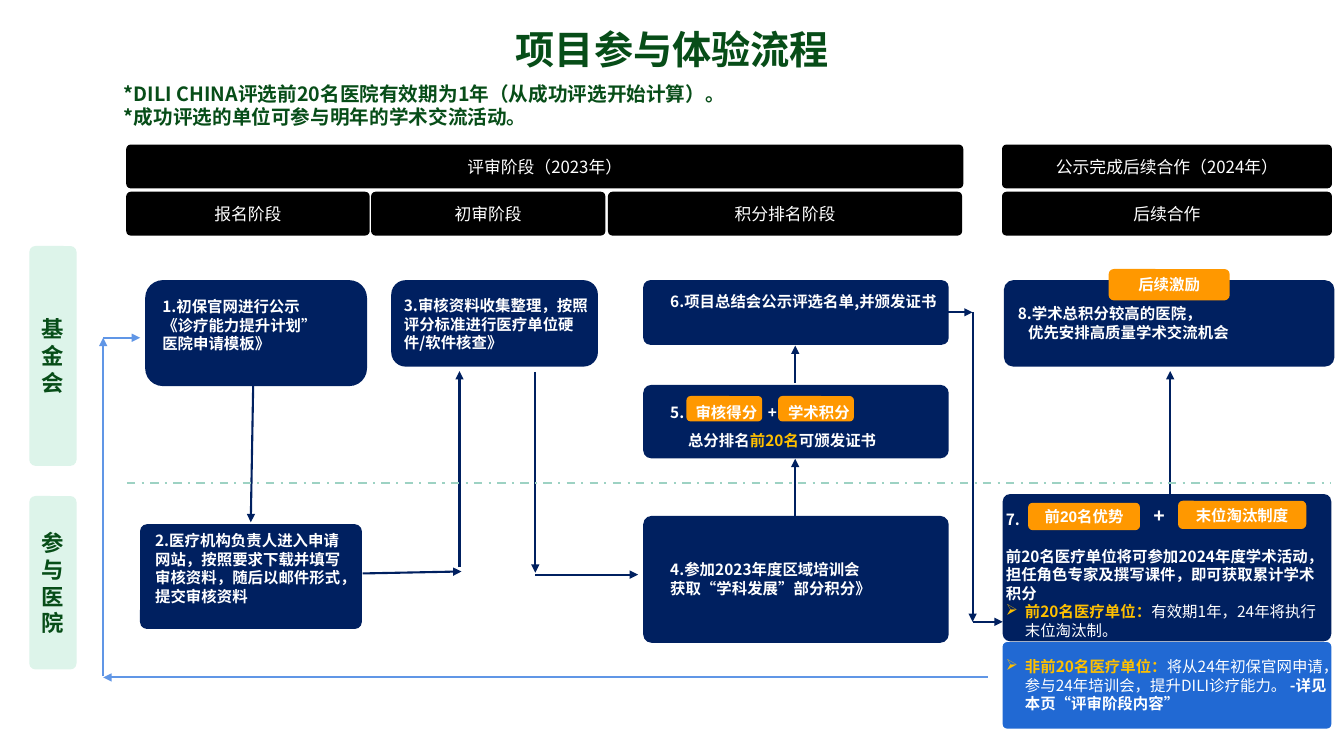
import pptx
import pptx.util
import pptx.dml.color
import pptx.enum.dml
import pptx.enum.shapes
import pptx.enum.text
import pptx.oxml.ns
import lxml.etree

Cm = pptx.util.Cm
Pt = pptx.util.Pt
RGBColor = pptx.dml.color.RGBColor
KIND = pptx.enum.shapes.MSO_SHAPE
ALIGN = pptx.enum.text.PP_ALIGN
ANCHOR = pptx.enum.text.MSO_ANCHOR
qn = pptx.oxml.ns.qn

NAVY = RGBColor(0x00, 0x20, 0x60)
BLUE = RGBColor(0x21, 0x69, 0xD3)
SKY = RGBColor(0x60, 0x96, 0xE6)
BLACK = RGBColor(0x00, 0x00, 0x00)
WHITE = RGBColor(0xFF, 0xFF, 0xFF)
GREEN = RGBColor(0x07, 0x4D, 0x18)
MINT = RGBColor(0xDD, 0xF4, 0xEA)
TEAL = RGBColor(0x9D, 0xD2, 0xC3)
ORANGE = RGBColor(0xFF, 0x98, 0x00)
GOLD = RGBColor(0xFF, 0xC0, 0x00)
NOTO = "Noto Sans CJK SC"


def write(shape, lines, size=11, color=WHITE, bold=True, align=ALIGN.LEFT,
          anchor=ANCHOR.TOP, space=1.0, face=NOTO):
    frame = shape.text_frame
    frame.word_wrap = True
    frame.auto_size = pptx.enum.text.MSO_AUTO_SIZE.NONE
    frame.vertical_anchor = anchor
    for i, line in enumerate(lines):
        para = frame.paragraphs[0] if i == 0 else frame.add_paragraph()
        para.alignment = align
        para.line_spacing = space
        para.space_before = Pt(0)
        parts = [(line, color, bold)] if isinstance(line, str) else line
        for text, tint, heavy in parts:
            if len(parts) == 1:
                para.text = text
            else:
                para.add_run().text = text
            for run in para.runs[-1:] if len(parts) > 1 else para.runs:
                run.font.size = Pt(size)
                run.font.bold = heavy
                run.font.name = face
                run.font.color.rgb = tint
                east = lxml.etree.SubElement(run.font._element, qn("a:ea"))
                east.set("typeface", NOTO)


def box(x, y, w, h, fill, round=0.167):
    shape = slide.shapes.add_shape(KIND.ROUNDED_RECTANGLE, Cm(x), Cm(y), Cm(w), Cm(h))
    shape.adjustments[0] = round
    shape.shadow.inherit = False
    shape.line.fill.background()
    if fill is None:
        shape.fill.background()
    else:
        shape.fill.solid()
        shape.fill.fore_color.rgb = fill
    return shape


deck = pptx.Presentation()
deck.slide_width = Cm(33.87)
deck.slide_height = Cm(19.05)
slide = deck.slides.add_slide(deck.slide_layouts[1])

title = slide.shapes.title
title.left, title.top, title.width, title.height = Cm(10.52), Cm(-0.08), Cm(12.85), Cm(1.83)
write(title, ["项目参与体验流程"], 28, GREEN, align=ALIGN.CENTER, space=1.5)

notes = slide.placeholders[1]
notes.left, notes.top, notes.width, notes.height = Cm(2.87), Cm(1.93), Cm(26.37), Cm(1.45)
write(notes, ["*DILI CHINA评选前20名医院有效期为1年（从成功评选开始计算）。",
              "*成功评选的单位可参与明年的学术交流活动。"], 14, GREEN)
for para in notes.text_frame.paragraphs:
    props = para._p.get_or_add_pPr()
    props.set("marL", "0")
    props.set("indent", "0")
    lxml.etree.SubElement(props, qn("a:buNone"))

for x, y, w, text in [
    (3.2, 3.66, 21.06, "评审阶段（2023年）"),
    (25.27, 3.66, 8.28, "公示完成后续合作（2024年）"),
    (3.2, 4.85, 6.1, "报名阶段"),
    (9.37, 4.85, 5.87, "初审阶段"),
    (15.34, 4.85, 8.89, "积分排名阶段"),
    (25.27, 4.85, 8.28, "后续合作"),
]:
    head = box(x, y, w, 1.07, BLACK, 0.09)
    head.line.color.rgb = BLACK
    head.line.width = Pt(1)
    write(head, [text], 12, bold=False, align=ALIGN.CENTER, anchor=ANCHOR.MIDDLE)

for y, h, lines in [(6.2, 5.54, ["基金会"]), (12.5, 4.37, list("参与医院"))]:
    write(box(0.74, y, 1.19, h, MINT, 0.13), lines, 16, GREEN,
          align=ALIGN.CENTER, anchor=ANCHOR.MIDDLE)

for x, y, w, h, fill, round in [
    (3.66, 7.06, 5.59, 2.67, NAVY, 0.167),
    (3.53, 13.21, 5.59, 2.64, NAVY, 0.067),
    (9.86, 7.06, 5.21, 2.18, NAVY, 0.167),
    (16.21, 13, 7.7, 3.2, NAVY, 0.067),
    (16.21, 9.7, 7.7, 1.85, NAVY, 0.11),
    (16.21, 7.06, 7.7, 1.63, NAVY, 0.11),
    (25.27, 12.45, 8.28, 3.71, NAVY, 0.05),
    (25.3, 7.06, 8.33, 2.18, NAVY, 0.11),
    (25.27, 16.18, 8.28, 2.18, BLUE, 0.05),
    (17.3, 9.98, 1.91, 0.64, ORANGE, 0.167),
    (19.61, 9.98, 1.91, 0.64, ORANGE, 0.167),
]:
    box(x, y, w, h, fill, round)

steps = []
for x, y, w, h, space, lines in [
    (3.84, 7.37, 5.08, 1.65, 1, ["1.初保官网进行公示", "《诊疗能力提升计划”\v医院申请模板》"]),
    (3.66, 13.26, 5.36, 2.13, 1,
     ["2.医疗机构负责人进入申请网站，按照要求下载并填写审核资料，随后以邮件形式，提交审核资料"]),
    (9.93, 7.34, 5.21, 1.17, 1, ["3.审核资料收集整理，按照评分标准进行医疗单位硬件/软件核查》"]),
    (16.64, 14, 8.08, 1.19, 1, ["4.参加2023年度区域培训会", "获取“学科发展”部分积分》"]),
    (16.64, 9.8, 7.11, 1.83, 1.5, [
        "5.\t审核得分\t+\t学术积分",
        [("总分排名", WHITE, True), ("前20名", GOLD, True), ("可颁发证书", WHITE, True)]]),
    (16.64, 7.24, 7.65, 1.19, 1, ["6.项目总结会公示评选名单,并颁发证书"]),
    (25.1, 12.73, 8.66, 5.44, 1, [
        "7.",
        "前20名医疗单位将可参加2024年度学术活动，担任角色专家及撰写课件，即可获取累计学术积分",
        [("前20名医疗单位：", GOLD, True), ("有效期1年，24年将执行末位淘汰制。", WHITE, False)],
        [("非前20名医疗单位：", GOLD, True),
         ("将从24年初保官网申请，参与24年培训会，提升DILI诊疗能力。", WHITE, False),
         (" -详见本页“评审阶段内容”", WHITE, True)]]),
    (25.4, 7.54, 7.75, 1.19, 1, ["8.学术总积分较高的医院，", "优先安排高质量学术交流机会"]),
]:
    step = slide.shapes.add_textbox(Cm(x), Cm(y), Cm(w), Cm(h))
    write(step, lines, space=space)
    steps.append(step.text_frame.paragraphs)

score, rules, bonus = steps[4], steps[6], steps[7]
tabs = lxml.etree.SubElement(score[0]._p.get_or_add_pPr(), qn("a:tabLst"))
for stop in [0.64, 2.46, 2.97]:
    lxml.etree.SubElement(tabs, qn("a:tab"), pos=str(Cm(stop)), algn="l")
score[1]._p.get_or_add_pPr().set("marL", str(Cm(0.45)))
bonus[1]._p.get_or_add_pPr().set("marL", str(Cm(0.26)))
for para in rules[2:]:
    props = para._p.get_or_add_pPr()
    props.set("marL", str(Cm(0.48)))
    props.set("indent", str(Cm(-0.48)))
    lxml.etree.SubElement(props, qn("a:buChar"), char="➢")
for para in [rules[1], rules[3]]:
    para.space_before = Pt(13)

for x, y, w, h, fill, size, face, text in [
    (27.94, 6.78, 3.05, 0.79, ORANGE, 11, NOTO, "后续激励"),
    (25.91, 12.67, 2.82, 0.69, ORANGE, 11, "Arial", "前20名优势"),
    (28.78, 12.62, 0.79, 0.71, None, 14, "Arial", "+"),
    (29.69, 12.62, 3.23, 0.71, ORANGE, 11, "Arial", "末位淘汰制度"),
]:
    write(box(x, y, w, h, fill), [text], size, align=ALIGN.CENTER,
          anchor=ANCHOR.MIDDLE, face=face)

for ax, ay, bx, by, color in [
    (6.38, 9.73, 6.32, 13.16, NAVY),
    (9.14, 14.45, 11.63, 14.4, NAVY),
    (11.58, 14.3, 11.58, 9.35, NAVY),
    (13.49, 9.37, 13.49, 14.43, NAVY),
    (13.49, 14.48, 16.08, 14.48, NAVY),
    (20.04, 13, 20.04, 11.56, NAVY),
    (20.04, 9.65, 20.04, 8.71, NAVY),
    (23.9, 7.87, 24.51, 7.87, NAVY),
    (24.51, 7.87, 24.51, 15.67, NAVY),
    (24.51, 15.67, 25.27, 15.67, NAVY),
    (29.49, 12.45, 29.49, 9.35, NAVY),
    (24.89, 17.07, 2.6, 17.07, SKY),
    (2.6, 17.04, 2.6, 8.51, SKY),
    (2.6, 8.51, 3.53, 8.51, SKY),
    (3.2, 12.17, 33.55, 12.17, TEAL),
]:
    link = slide.shapes.add_connector(
        pptx.enum.shapes.MSO_CONNECTOR.STRAIGHT, Cm(ax), Cm(ay), Cm(bx), Cm(by))
    link.line.color.rgb = color
    link.line.width = Pt(1.5)
    if color == TEAL:
        link.line.dash_style = pptx.enum.dml.MSO_LINE.DASH_DOT
    else:
        lxml.etree.SubElement(link.line._get_or_add_ln(), qn("a:tailEnd"), type="triangle")
    lxml.etree.SubElement(link._element.spPr, qn("a:effectLst"))

deck.save("out.pptx")
